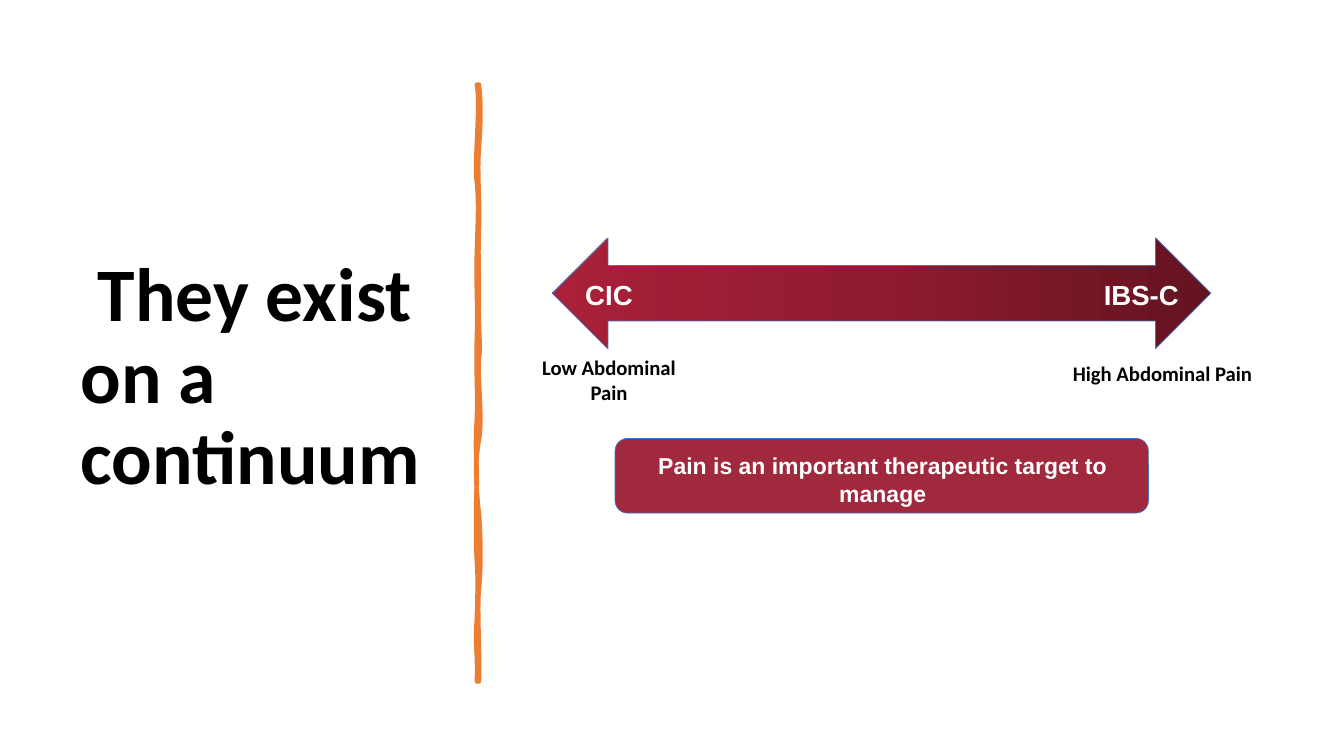
from copy import deepcopy
from dataclasses import dataclass

from lxml.etree import SubElement
from pptx import Presentation
from pptx.dml.color import RGBColor
from pptx.enum.shapes import MSO_SHAPE as Preset
from pptx.enum.text import MSO_ANCHOR as Anchor, MSO_AUTO_SIZE as AutoSize, PP_ALIGN as Align
from pptx.oxml.ns import qn
from pptx.util import Emu, Pt

PX = 9144  # EMU per px, 100 px to the inch

COLOURS = {
    "black": "000000", "white": "FFFFFF", "orange": "ED7D31", "outline": "4472C4",
    "banner": "A0293E", "dark red": "641321", "mid red": "8E1B2F", "red": "A92038",
}

# Hand-drawn divider: start, then control, control, end for each curve
DIVIDER = [
    (475, 84),
    (477, 102), (477, 119), (475, 146), (473, 173), (476, 195), (475, 226),
    (474, 257), (475, 262), (475, 294), (474, 325), (477, 342), (475, 356),
    (473, 370), (479, 414), (475, 436), (471, 457), (472, 484), (475, 510),
    (477, 536), (477, 564), (475, 584), (473, 603), (476, 650), (475, 676),
    (474, 676), (473, 676), (473, 676), (474, 646), (471, 644), (473, 613),
    (474, 583), (474, 570), (473, 557), (472, 544), (472, 495), (473, 477),
    (473, 459), (471, 445), (473, 415), (474, 386), (472, 373), (473, 335),
    (474, 298), (472, 281), (473, 250), (474, 218), (475, 200), (473, 181),
    (470, 163), (477, 104), (473, 84), (474, 84), (474, 84), (475, 84),
]


@dataclass(frozen=True)
class Box:
    left: int
    top: int
    width: int
    height: int

    def emu(self) -> tuple[Emu, ...]:
        return tuple(Emu(n * PX) for n in (self.left, self.top, self.width, self.height))


@dataclass(frozen=True)
class Label:
    text: str
    box: Box
    size: float
    font: str
    colour: str


ARROW = Box(548, 236, 653, 110)
BANNER = Box(610, 435, 529, 74)
LABELS = [
    Label("Low Abdominal Pain", Box(508, 347, 192, 60), 14.8, "Calibri", "black"),
    Label("High Abdominal Pain", Box(1043, 353, 220, 35), 14.8, "Calibri", "black"),
    Label("CIC", Box(549, 271, 110, 43), 19.7, "Arial", "white"),
    Label("IBS-C", Box(1077, 271, 110, 43), 19.7, "Arial", "white"),
]
BANNER_LABEL = Label("Pain is an important therapeutic target to manage",
                     Box(622, 443, 507, 65), 16.4, "Arial", "white")
TITLE = Label(" They exist on a continuum", Box(70, 70, 374, 611), 54, "Calibri", "black")


def rgb(name: str) -> RGBColor:
    return RGBColor.from_string(COLOURS[name])


def write(paragraph, label: Label) -> None:
    run = paragraph.add_run()
    run.text = label.text
    run.font.name = label.font
    run.font.size = Pt(label.size)
    run.font.bold = True
    run.font.color.rgb = rgb(label.colour)


def add_label(slide, label: Label) -> None:
    frame = slide.shapes.add_textbox(*label.box.emu()).text_frame
    frame.word_wrap = True
    frame.auto_size = AutoSize.SHAPE_TO_FIT_TEXT
    paragraph = frame.paragraphs[0]
    paragraph.alignment = Align.CENTER
    paragraph.space_after = Pt(6)
    write(paragraph, label)


def set_title(slide) -> None:
    title = slide.shapes.title
    title.left, title.top, title.width, title.height = TITLE.box.emu()
    frame = title.text_frame
    frame.word_wrap = True
    frame.auto_size = AutoSize.NONE
    frame.vertical_anchor = Anchor.MIDDLE
    paragraph = frame.paragraphs[0]
    paragraph.alignment = Align.LEFT
    paragraph.line_spacing = 0.9
    write(paragraph, TITLE)


def style_line(shape, colour: str, width: float) -> None:
    shape.shadow.inherit = False
    shape.line.color.rgb = rgb(colour)
    shape.line.width = Pt(width)


def bend(outline) -> None:
    """Turn each three straight segments into one cubic curve."""
    segments = list(outline.element.iter(qn("a:lnTo")))
    for first in range(0, len(segments), 3):
        curve = SubElement(segments[first].getparent(), qn("a:cubicBezTo"))
        segments[first].addprevious(curve)
        for segment in segments[first:first + 3]:
            curve.append(segment[0])
            segment.getparent().remove(segment)


def add_divider(slide) -> None:
    builder = slide.shapes.build_freeform(*DIVIDER[0], scale=PX)
    builder.add_line_segments(DIVIDER[1:], close=True)
    divider = builder.convert_to_shape()
    bend(divider)
    divider.fill.solid()
    divider.fill.fore_color.rgb = rgb("orange")
    style_line(divider, "orange", 3.25)


def add_continuum_arrow(slide) -> None:
    arrow = slide.shapes.add_shape(Preset.LEFT_RIGHT_ARROW, *ARROW.emu())
    style_line(arrow, "outline", 0.5)
    arrow.fill.gradient()
    arrow.fill.gradient_angle = 180
    # The default gradient has two stops; a third is needed
    stop_list = next(arrow.element.iter(qn("a:gsLst")))
    stop_list.append(deepcopy(stop_list[-1]))
    stops = ((0, "dark red"), (0.5, "mid red"), (1, "red"))
    for stop, (position, colour) in zip(arrow.fill.gradient_stops, stops):
        stop.position = position
        stop.color.rgb = rgb(colour)


def add_banner(slide) -> None:
    banner = slide.shapes.add_shape(Preset.ROUNDED_RECTANGLE, *BANNER.emu())
    banner.fill.solid()
    banner.fill.fore_color.rgb = rgb("banner")
    style_line(banner, "outline", 0.5)
    add_label(slide, BANNER_LABEL)


def main() -> None:
    deck = Presentation()
    deck.slide_width, deck.slide_height = Emu(1333 * PX), Emu(750 * PX)
    slide = deck.slides.add_slide(deck.slide_layouts.get_by_name("Title Only"))

    # Left: title and divider
    set_title(slide)
    add_divider(slide)

    # Right: continuum with its labels, then the message
    add_continuum_arrow(slide)
    for label in LABELS:
        add_label(slide, label)
    add_banner(slide)

    deck.save("out.pptx")


if __name__ == "__main__":
    main()
